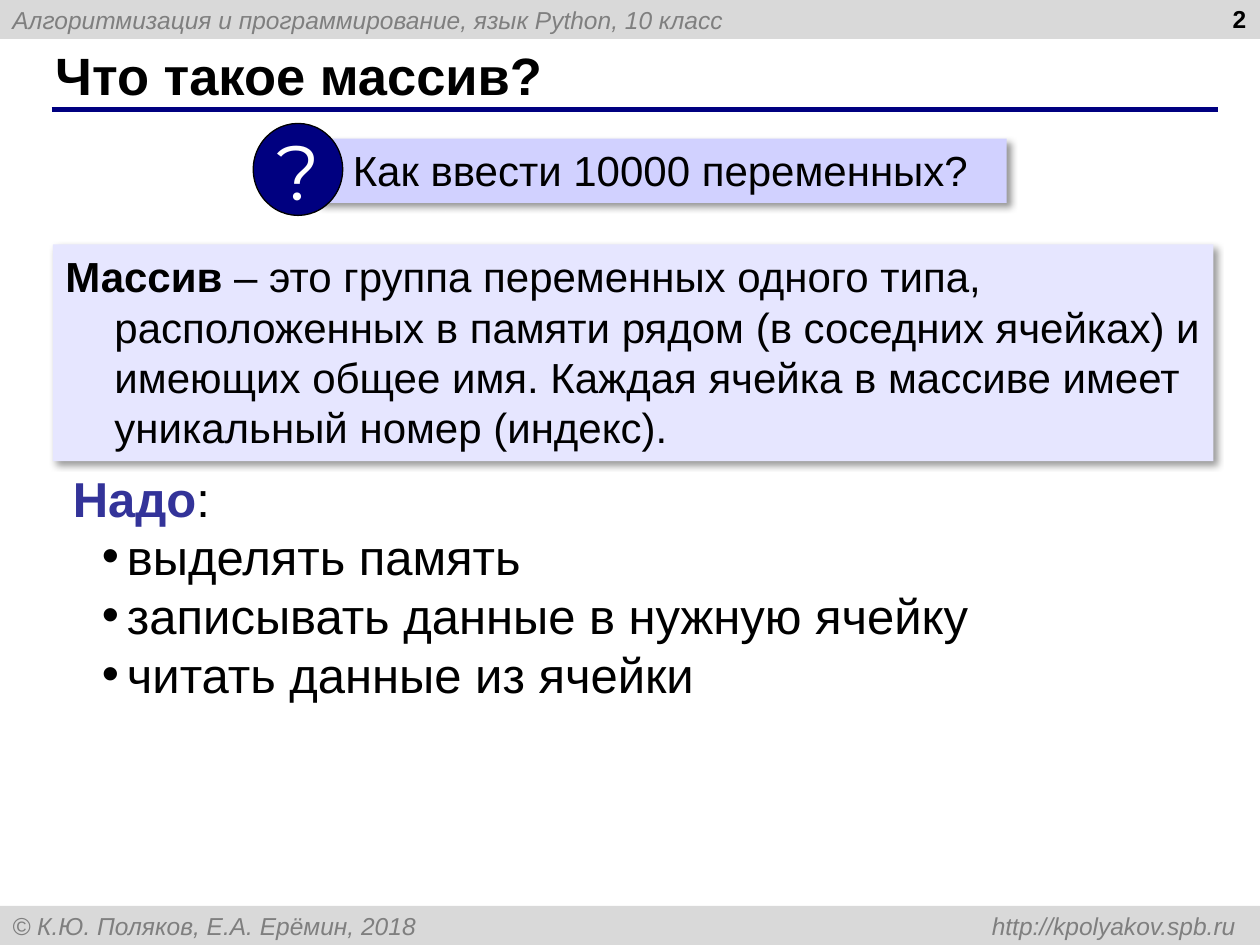
"""Build the slide that explains what an array is."""
from lxml import etree
from pptx import Presentation
from pptx.dml.color import RGBColor
from pptx.enum import shapes, text
from pptx.oxml import parse_xml
from pptx.oxml.ns import nsdecls, qn
from pptx.util import Inches, Pt

BLACK = RGBColor(0x00, 0x00, 0x00)
WHITE = RGBColor(0xFF, 0xFF, 0xFF)
NAVY = RGBColor(0x00, 0x00, 0x80)
INDIGO = RGBColor(0x33, 0x33, 0x99)
LILAC = RGBColor(0xD1, 0xD1, 0xFF)
PALE_LILAC = RGBColor(0xE6, 0xE6, 0xFF)
BAND_GREY = RGBColor(0xD9, 0xD9, 0xD9)
TEXT_GREY = RGBColor(0x7F, 0x7F, 0x7F)

LEFT, RIGHT, CENTER, JUSTIFY = (
    text.PP_ALIGN.LEFT, text.PP_ALIGN.RIGHT, text.PP_ALIGN.CENTER, text.PP_ALIGN.JUSTIFY)
TOP, MIDDLE = text.MSO_ANCHOR.TOP, text.MSO_ANCHOR.MIDDLE
RECTANGLE, OVAL = shapes.MSO_SHAPE.RECTANGLE, shapes.MSO_SHAPE.OVAL

SHADOW = f"""<a:effectLst {nsdecls("a")}>
  <a:outerShdw blurRad="{Pt(4)}" dist="{Pt(3)}" dir="2700000" algn="tl" rotWithShape="0">
    <a:srgbClr val="000000"><a:alpha val="40000"/></a:srgbClr>
  </a:outerShdw>
</a:effectLst>"""


def add_panel(parent, kind, box, fill, shadow=False):
    panel = parent.add_shape(kind, *map(Inches, box))
    panel.shadow.inherit = False
    panel.fill.solid()
    panel.fill.fore_color.rgb = fill
    panel.line.fill.background()
    if shadow:
        properties = panel._element.spPr
        properties.replace(properties.find(qn("a:effectLst")), parse_xml(SHADOW))
    return panel


def write(shape, lines, size, color=BLACK, align=LEFT, anchor=TOP,
          bold=False, italic=False, font="Arial"):
    frame = shape.text_frame
    frame.word_wrap = True
    frame.vertical_anchor = anchor
    frame.text = "\n".join(lines)
    for paragraph in frame.paragraphs:
        paragraph.alignment = align
        for run in paragraph.runs:
            run.font.name = font
            run.font.size = Pt(size)
            run.font.color.rgb = color
            run.font.bold = bold
            run.font.italic = italic
    return frame


deck = Presentation()
deck.slide_width, deck.slide_height = Inches(10), Inches(7.5)
slide = deck.slides.add_slide(deck.slide_layouts[6])
canvas = slide.shapes

bands = [
    (0, "Алгоритмизация и программирование, язык Python, 10 класс"),
    (7.19, "© К.Ю. Поляков, Е.А. Ерёмин, 2018\thttp://kpolyakov.spb.ru"),
]
for top, caption in bands:
    band = add_panel(canvas, RECTANGLE, (0, top, 10, 0.31), BAND_GREY)
    band_text = write(band, [caption], 14, TEXT_GREY, anchor=MIDDLE, italic=True)
tab_list = etree.SubElement(band_text.paragraphs[0]._p.get_or_add_pPr(), qn("a:tabLst"))
etree.SubElement(tab_list, qn("a:tab"), pos=str(Inches(9.71)), algn="r")

title_rule = canvas.add_connector(
    shapes.MSO_CONNECTOR.STRAIGHT, Inches(0.41), Inches(0.87), Inches(9.67), Inches(0.87))
title_rule.line.color.rgb = NAVY
title_rule.line.width = Pt(3)
etree.SubElement(title_rule._element.spPr, qn("a:effectLst"))

title = canvas.add_textbox(Inches(0.34), Inches(0.33), Inches(9.16), Inches(0.52))
write(title, ["Что такое массив?"], 30, anchor=MIDDLE, bold=True)

page_number = canvas.add_textbox(Inches(7.66), Inches(-0.02), Inches(2.33), Inches(0.52))
write(page_number, ["2"], 14, align=RIGHT, bold=True)

definition = add_panel(canvas, RECTANGLE, (0.42, 1.94, 9.21, 1.72), PALE_LILAC, shadow=True)
definition_text = write(definition, ["Массив"], 24, bold=True)
meaning = definition_text.paragraphs[0].add_run()
meaning.text = (" – это группа переменных одного типа, расположенных в памяти рядом "
                "(в соседних ячейках) и имеющих общее имя. Каждая ячейка в массиве "
                "имеет уникальный номер (индекс).")
meaning.font.name = "Arial"
meaning.font.size = Pt(24)
meaning.font.color.rgb = BLACK
hanging = definition_text.paragraphs[0]._p.get_or_add_pPr()
hanging.set("marL", str(Inches(0.39)))
hanging.set("indent", str(Inches(-0.39)))

needs = canvas.add_textbox(Inches(0.48), Inches(3.67), Inches(7.53), Inches(0.57))
needs_text = write(needs, ["Надо"], 28, INDIGO, JUSTIFY, MIDDLE, bold=True)
colon = needs_text.paragraphs[0].add_run()
colon.text = ":"
colon.font.name = "Arial"
colon.font.size = Pt(28)
colon.font.color.rgb = BLACK

question = canvas.add_group_shape().shapes
question_bar = add_panel(question, RECTANGLE, (2.52, 1.1, 5.47, 0.51), LILAC, shadow=True)
question_text = write(question_bar, ["Как ввести 10000 переменных?"], 24)
question_text.margin_left = Inches(0.28)
question_mark = add_panel(question, OVAL, (2.01, 0.98, 0.71, 0.73), NAVY)
question_mark.line.color.rgb = BLACK
question_mark.line.width = Pt(0.75)
mark_text = write(question_mark, ["?"], 44, WHITE, CENTER, MIDDLE, font="Montserrat")
mark_text.word_wrap = False

tasks = canvas.add_textbox(Inches(0.71), Inches(4.13), Inches(7.87), Inches(1.52))
tasks_text = write(
    tasks,
    ["выделять память", "записывать данные в нужную ячейку", "читать данные из ячейки"],
    28, align=JUSTIFY)
for task in tasks_text.paragraphs:
    bullet = task._p.get_or_add_pPr()
    bullet.set("marL", str(Inches(0.2)))
    bullet.set("indent", str(Inches(-0.2)))
    etree.SubElement(bullet, qn("a:buFont"), typeface="Arial")
    etree.SubElement(bullet, qn("a:buChar"), char="•")

deck.save("out.pptx")
